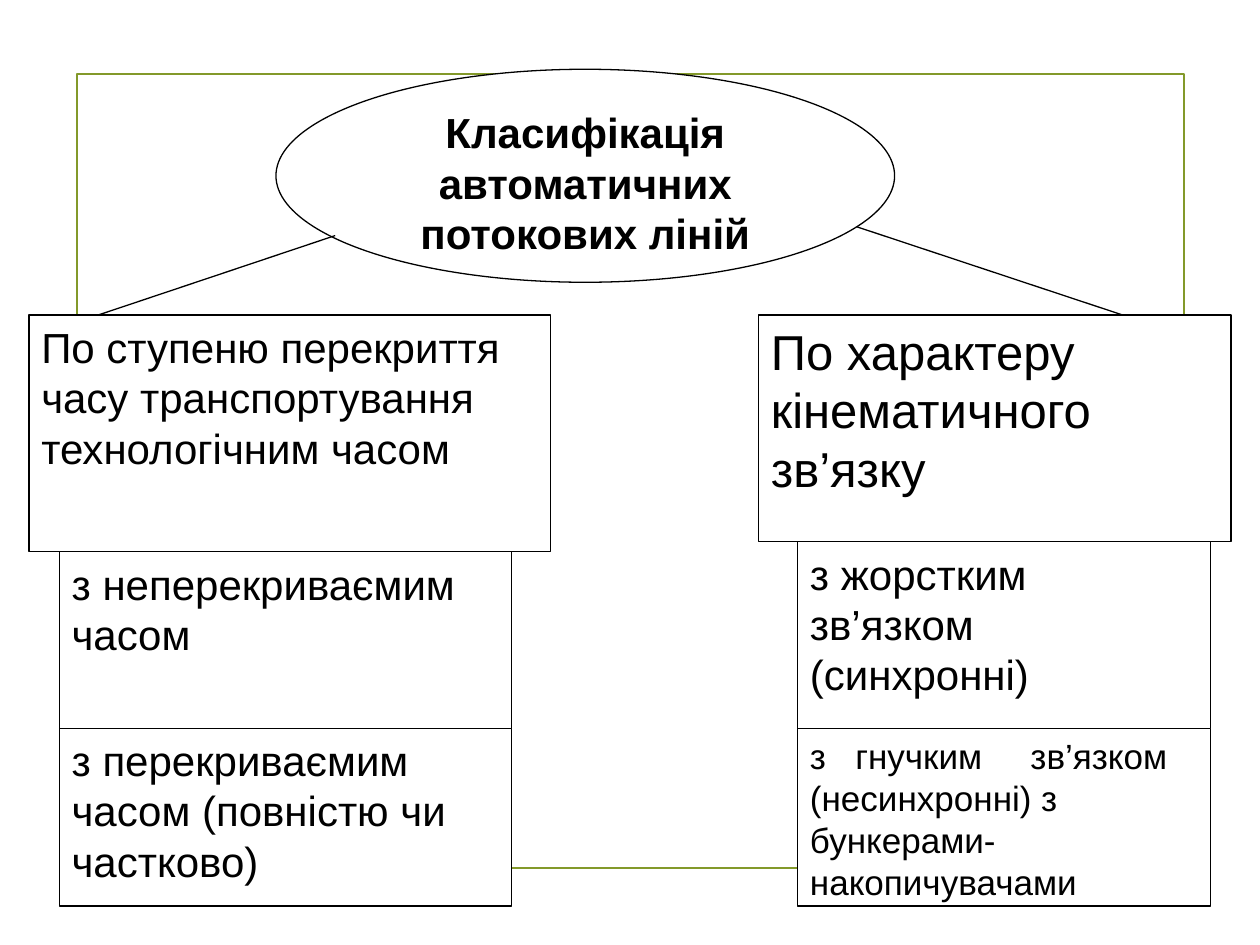
from lxml.etree import SubElement
from pptx import Presentation
from pptx.dml.color import RGBColor
from pptx.enum.shapes import MSO_CONNECTOR as Connector, MSO_SHAPE as Shape
from pptx.enum.text import MSO_ANCHOR as Anchor, PP_ALIGN as Align
from pptx.oxml.ns import qn
from pptx.util import Inches, Pt

BLACK = RGBColor(0x00, 0x00, 0x00)
WHITE = RGBColor(0xFF, 0xFF, 0xFF)
OLIVE = RGBColor(0x83, 0x99, 0x2A)

# Content: heading and two branches, each a criterion with its kinds (text, size)
HEADING = ["Класифікація", "автоматичних потокових ліній"]
BRANCHES = [
    {
        "criterion": ("По ступеню перекриття часу транспортування технологічним часом", 24),
        "kinds": [("з неперекриваємим часом", 24),
                  ("з перекриваємим часом (повністю чи частково)", 24)],
        "criterion_column": (0.23, 4.14),
        "kind_column": (0.47, 3.59),
        "kinds_top": 4.38,
        "link": ((2.66, 1.87), 0.78),
    },
    {
        "criterion": ("По характеру кінематичного зв’язку", 28),
        "kinds": [("з жорстким зв’язком (синхронні)", 24),
                  ("з\tгнучким\tзв’язком (несинхронні) з бункерами-накопичувачами", 20)],
        "criterion_column": (6.02, 3.75),
        "kind_column": (6.33, 3.28),
        "kinds_top": 4.3,
        "link": ((6.8, 1.8), 8.91),
    },
]

# Shared rows and tab stops, in inches
CRITERION_TOP, LAST_KIND_TOP, BOTTOM = 2.5, 5.78, 7.19
TAB_STOPS = (0.36, 1.75)

deck = Presentation()
deck.slide_width, deck.slide_height = Inches(10), Inches(7.5)
slide = deck.slides.add_slide(deck.slide_layouts[6])


def add_outline(preset, left, top, width, height, color=BLACK, weight=0.75, fill=WHITE):
    outline = slide.shapes.add_shape(preset, *map(Inches, (left, top, width, height)))
    outline.shadow.inherit = False
    outline.line.color.rgb = color
    outline.line.width = Pt(weight)
    if fill is None:
        outline.fill.background()
    else:
        outline.fill.solid()
        outline.fill.fore_color.rgb = fill
    return outline


def add_tab_stops(paragraph):
    stops = SubElement(paragraph._p.get_or_add_pPr(), qn("a:tabLst"))
    for position in TAB_STOPS:
        SubElement(stops, qn("a:tab"), pos=str(Inches(position)), algn="l")


def write(outline, lines, size, align=Align.LEFT, bold=False):
    frame = outline.text_frame
    frame.word_wrap = True
    frame.vertical_anchor = Anchor.TOP
    font_format = {"name": "Arial", "size": Pt(size), "bold": bold}
    for index, line in enumerate(lines):
        paragraph = frame.add_paragraph() if index else frame.paragraphs[0]
        paragraph.alignment = align
        if "\t" in line:
            add_tab_stops(paragraph)
        run = paragraph.add_run()
        run.text = line
        for key, value in font_format.items():
            setattr(run.font, key, value)
        run.font.color.rgb = BLACK


def add_box(entry, column, top, bottom):
    text, size = entry
    left, width = column
    write(add_outline(Shape.RECTANGLE, left, top, width, bottom - top), [text], size)


def add_link(start, end):
    link = slide.shapes.add_connector(Connector.STRAIGHT, *map(Inches, start + end))
    link.line.color.rgb = BLACK
    link.line.width = Pt(0.75)
    SubElement(link._element.spPr, qn("a:effectLst"))


# Background frame
add_outline(Shape.RECTANGLE, 0.61, 0.59, 8.79, 6.3, OLIVE, 1.25, None)

# Criteria with their kinds stacked below
for branch in BRANCHES:
    kinds_top = branch["kinds_top"]
    add_box(branch["criterion"], branch["criterion_column"], CRITERION_TOP, kinds_top)
    rows = (kinds_top, LAST_KIND_TOP, BOTTOM)
    for kind, top, bottom in zip(branch["kinds"], rows, rows[1:]):
        add_box(kind, branch["kind_column"], top, bottom)

# Heading ellipse
heading = add_outline(Shape.OVAL, 2.19, 0.55, 4.91, 1.69)
write(heading, HEADING, 24, Align.CENTER, True)

# Links from the heading to the criteria
for branch in BRANCHES:
    start, end_x = branch["link"]
    add_link(start, (end_x, CRITERION_TOP))

deck.save("out.pptx")
